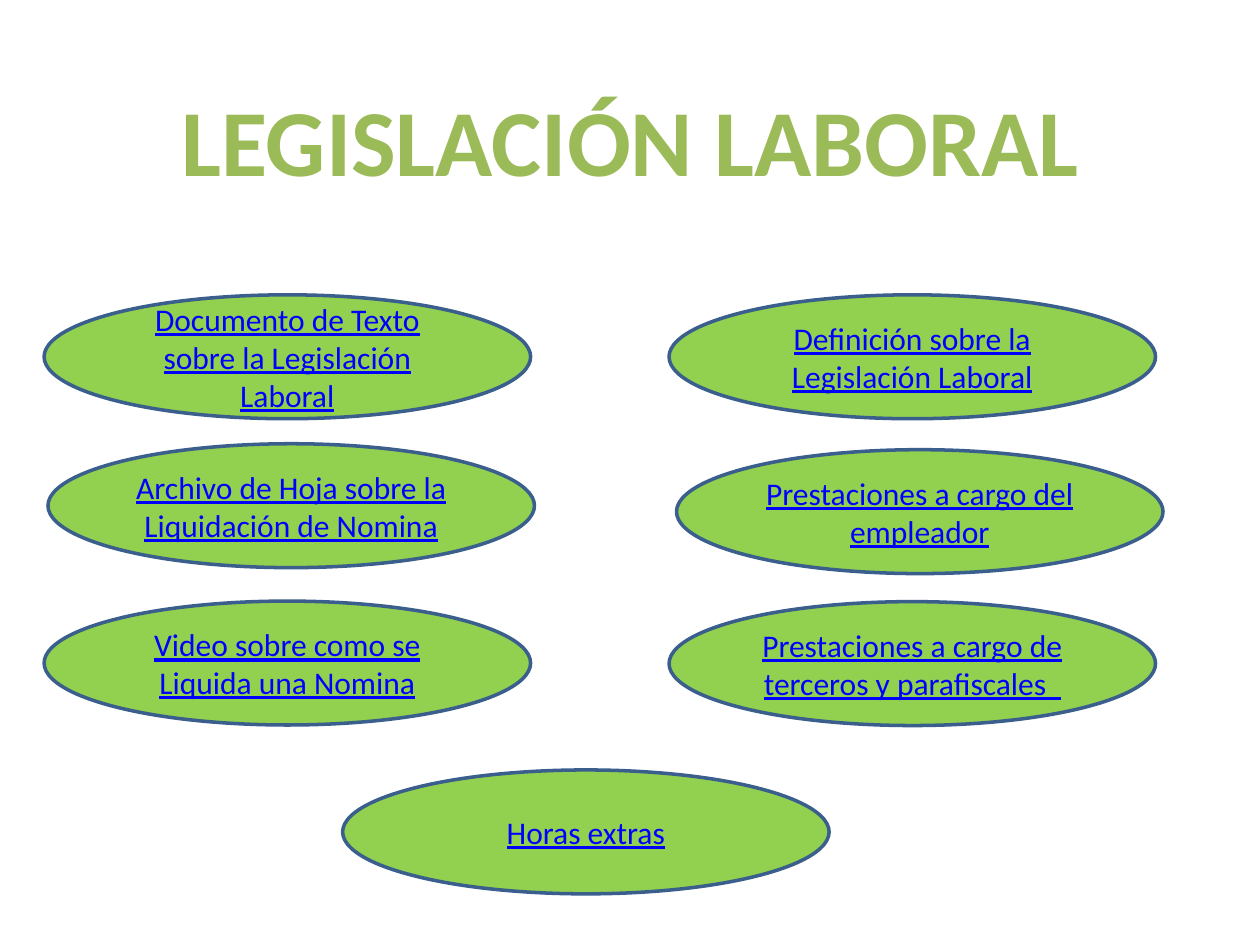
import pptx
import pptx.util
import pptx.dml.color
import pptx.enum.shapes
import pptx.enum.text

Pt = pptx.util.Pt
FONT = "Calibri"
COLORS = {"title": "9BBB59", "fill": "92D050", "outline": "3A5F8C", "link": "0000FF"}

TITLE = "LEGISLACIÓN LABORAL"
# Topic, left, top
TOPICS = [
    ("Documento de Texto sobre la Legislación Laboral", 25.2, 168.5),
    ("Archivo de Hoja sobre la Liquidación de Nomina", 27.4, 253.6),
    ("Video sobre como se Liquida una Nomina", 25.2, 343.5),
    ("Definición sobre la Legislación Laboral", 382.3, 168.5),
    ("Prestaciones a cargo de terceros y parafiscales  ", 382.3, 343.8),
    ("Prestaciones a cargo del empleador", 386.6, 257),
    ("Horas extras", 195.8, 440),
]
OVAL_WIDTH, OVAL_HEIGHT = 278, 70.8


def color(name):
    return pptx.dml.color.RGBColor.from_string(COLORS[name])


def write(shape, text, size, color_name, anchor, bold=False, underline=False):
    frame = shape.text_frame
    frame.text = text
    frame.word_wrap = True
    frame.vertical_anchor = anchor
    paragraph = frame.paragraphs[0]
    paragraph.alignment = pptx.enum.text.PP_ALIGN.CENTER
    font = paragraph.runs[0].font
    font.name, font.size = FONT, Pt(size)
    font.bold, font.underline = bold, underline
    font.color.rgb = color(color_name)


presentation = pptx.Presentation()
presentation.slide_width, presentation.slide_height = Pt(720), Pt(540)
slide = presentation.slides.add_slide(presentation.slide_layouts[5])

# Title
title = slide.shapes.title
title.left, title.top, title.width, title.height = Pt(33.8), Pt(43.2), Pt(653), Pt(72.7)
write(title, TITLE, 54, "title", pptx.enum.text.MSO_ANCHOR.TOP, bold=True)
title.text_frame.auto_size = pptx.enum.text.MSO_AUTO_SIZE.NONE

# Topic ovals
for text, left, top in TOPICS:
    oval = slide.shapes.add_shape(
        pptx.enum.shapes.MSO_SHAPE.OVAL,
        Pt(left), Pt(top), Pt(OVAL_WIDTH), Pt(OVAL_HEIGHT))
    oval.shadow.inherit = False
    oval.fill.solid()
    oval.fill.fore_color.rgb = color("fill")
    oval.line.color.rgb = color("outline")
    oval.line.width = Pt(2)
    write(oval, text, 18, "link", pptx.enum.text.MSO_ANCHOR.MIDDLE, underline=True)

presentation.save("out.pptx")
